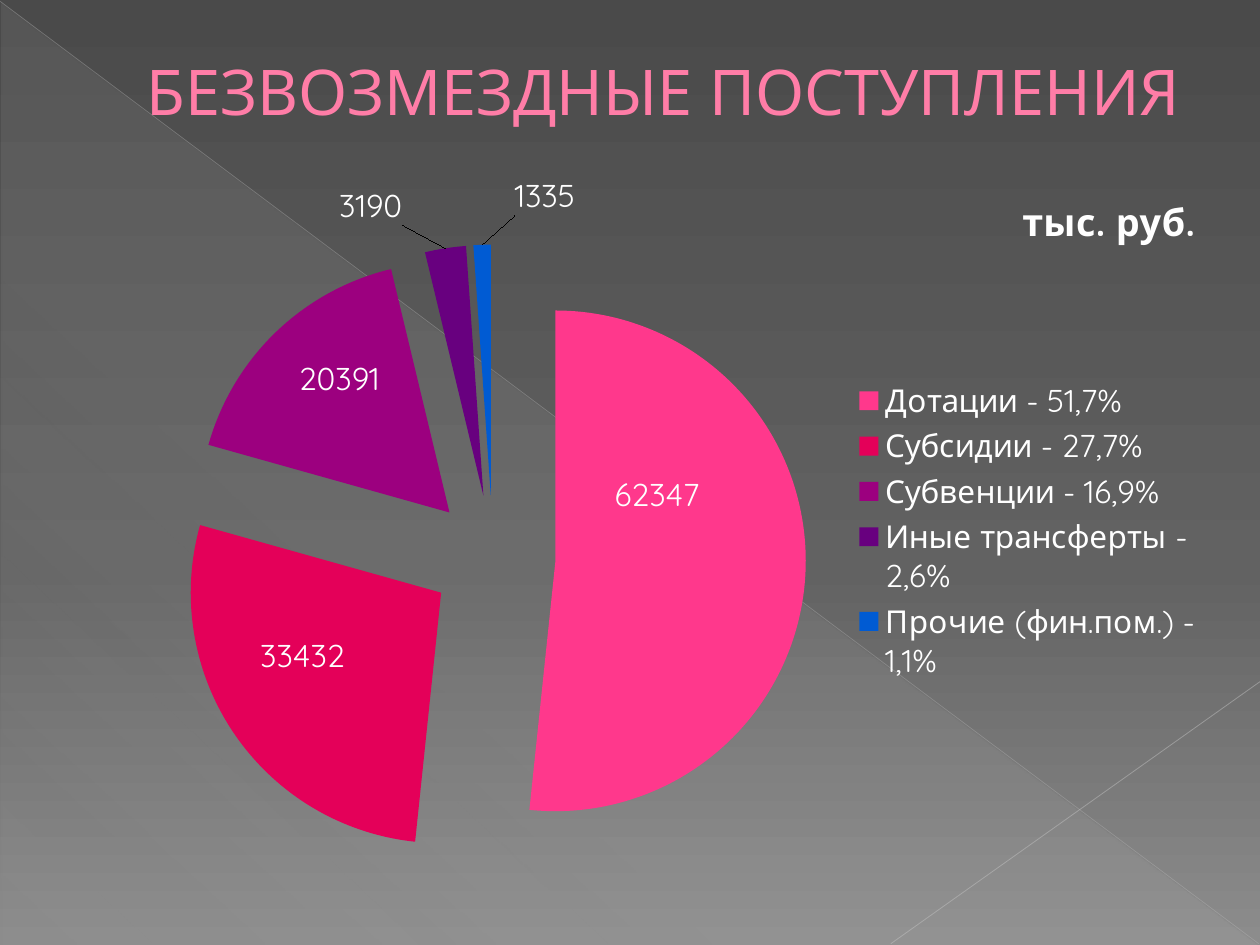
from dataclasses import dataclass

from lxml.etree import SubElement
from pptx import Presentation
from pptx.chart.data import CategoryChartData
from pptx.dml.color import RGBColor
from pptx.enum.chart import XL_CHART_TYPE as ChartType
from pptx.enum.chart import XL_LABEL_POSITION as LabelPosition
from pptx.enum.chart import XL_LEGEND_POSITION as LegendPosition
from pptx.enum.shapes import MSO_CONNECTOR as Connector
from pptx.enum.shapes import MSO_SHAPE as Shape
from pptx.enum.text import MSO_ANCHOR as Anchor
from pptx.enum.text import PP_ALIGN as Align
from pptx.oxml import parse_xml
from pptx.oxml.ns import qn
from pptx.util import Inches, Pt


@dataclass(frozen=True)
class Theme:
    font: str = "Quicksand"
    title_color: str = "FF7DA7"
    text_color: str = "FFFFFF"
    leader_color: str = "000000"
    title_size: float = 36
    unit_size: float = 21.6
    chart_size: float = 18
    background: tuple = ((0, "4A4A4A", 100), (60, "626262", 100), (100, "8C8C8C", 100))
    sheen: tuple = ((0, "D2D2D2", 10), (70, "D2D2D2", 8), (100, "D2D2D2", 1))


THEME = Theme()

SLICES = [
    ("Дотации - 51,7%", 62347, "FF388C", (-0.02, -0.1)),
    ("Субсидии - 27,7%", 33432, "E40059", (-0.03, -0.01)),
    ("Субвенции - 16,9%", 20391, "9C007F", (-0.02, -0.06)),
    ("Иные трансферты - 2,6%", 3190, "68007F", (-0.08, -0.23)),
    ("Прочие (фин.пом.) - 1,1%", 1335, "005BD3", (0.05, -0.24)),
]

DIAGONALS = [
    ((0, 0.01), (9.99, 7.49), "BFBFBF", 0.39, 35),
    ((10, 5.41), (7.07, 7.49), "C6C6C6", 0.47, 45),
]


def set_attributes(target, values):
    for name, value in values.items():
        setattr(target, name, value)


def format_font(font, size, color, bold=False):
    set_attributes(font, {"name": THEME.font, "size": Pt(size), "bold": bold})
    font.color.rgb = RGBColor.from_string(color)


def set_gradient(fill, properties, stops, angle):
    fill.gradient()
    gradient = properties.find(qn("a:gradFill"))
    for child in list(gradient):
        gradient.remove(child)
    stop_list = SubElement(gradient, qn("a:gsLst"))
    for position, color, opacity in stops:
        stop = SubElement(stop_list, qn("a:gs"), pos=str(position * 1000))
        rgb = SubElement(stop, qn("a:srgbClr"), val=color)
        SubElement(rgb, qn("a:alpha"), val=str(opacity * 1000))
    SubElement(gradient, qn("a:lin"), ang=str(angle * 60000), scaled="0")


def set_layout(parent, x, y, width=None, height=None, inner=False, edge=True):
    for old in parent.findall(qn("c:layout")):
        parent.remove(old)
    layout = SubElement(parent, qn("c:layout"))
    manual = SubElement(layout, qn("c:manualLayout"))
    if inner:
        SubElement(manual, qn("c:layoutTarget"), val="inner")
    if edge:
        SubElement(manual, qn("c:xMode"), val="edge")
        SubElement(manual, qn("c:yMode"), val="edge")
    for tag, value in (("x", x), ("y", y), ("w", width), ("h", height)):
        if value is not None:
            SubElement(manual, qn(f"c:{tag}"), val=str(value))
    return layout


def add_backdrop(slide):
    fill = slide.background.fill
    fill.solid()
    properties = slide.element.find(".//" + qn("p:bgPr"))
    set_gradient(fill, properties, THEME.background, 90)
    triangle = slide.shapes.add_shape(
        Shape.RIGHT_TRIANGLE, Inches(0.01), Inches(0.02), Inches(9.98), Inches(7.48)
    )
    triangle.shadow.inherit = False
    triangle.line.fill.background()
    set_gradient(triangle.fill, triangle.element.spPr, THEME.sheen, 133)


def add_diagonal(slide, start, end, color, width, opacity):
    points = [Inches(value) for value in (*start, *end)]
    line = slide.shapes.add_connector(Connector.STRAIGHT, *points)
    line.line.width = Pt(width)
    line.line.color.rgb = RGBColor.from_string(color)
    rgb = line.element.spPr.find(".//" + qn("a:srgbClr"))
    SubElement(rgb, qn("a:alpha"), val=str(opacity * 1000))
    SubElement(line.element.spPr, qn("a:effectLst"))


def add_title(slide, text):
    title = slide.shapes.title
    title.element.getparent().append(title.element)
    set_attributes(title, {
        "left": Inches(0.5), "top": Inches(0.29),
        "width": Inches(9), "height": Inches(0.86),
    })
    title.text_frame.text = text
    title.text_frame.vertical_anchor = Anchor.MIDDLE
    paragraph = title.text_frame.paragraphs[0]
    paragraph.alignment = Align.CENTER
    properties = paragraph._p.get_or_add_pPr()
    properties.set("marL", str(Inches(0.53)))
    properties.set("indent", "0")
    format_font(paragraph.runs[0].font, THEME.title_size, THEME.title_color)


def add_pie(slide):
    data = CategoryChartData()
    data.categories = [name for name, *_ in SLICES]
    data.add_series("Series 1", [value for _, value, *_ in SLICES])
    chart = slide.shapes.add_chart(
        ChartType.PIE, Inches(0.35), Inches(1.31), Inches(9.29), Inches(5.75), data
    ).chart
    format_font(chart.font, THEME.chart_size, THEME.text_color)
    plot_area = chart._chartSpace.find(".//" + qn("c:plotArea"))
    plot_area.insert(0, set_layout(plot_area, 0.009, 0.11, 0.749, 0.864, inner=True))
    plot = chart.plots[0]
    plot.vary_by_categories = True
    format_slices(plot)
    return chart


def format_slices(plot):
    series = plot.series[0]
    for index, (_, _, color, _) in enumerate(SLICES):
        fill = series.points[index].format.fill
        fill.solid()
        fill.fore_color.rgb = RGBColor.from_string(color)
    explosion = parse_xml(
        '<c:explosion xmlns:c="http://schemas.openxmlformats.org/drawingml/2006/chart" val="25"/>'
    )
    series._element.find(qn("c:dPt")).addprevious(explosion)
    labels = series.data_labels
    set_attributes(labels, {"show_value": True, "position": LabelPosition.CENTER})
    format_font(labels.font, THEME.chart_size, THEME.text_color)
    for index, (_, _, _, offset) in enumerate(SLICES):
        series.points[index].data_label.position = LabelPosition.CENTER
    group = labels._element
    for label, (_, _, _, offset) in zip(group.findall(qn("c:dLbl")), SLICES):
        layout = set_layout(label, *offset, edge=False)
        label.find(qn("c:idx")).addnext(layout)
        for tag in ("showLegendKey", "showCatName", "showSerName", "showPercent"):
            label.find(qn(f"c:{tag}")).set("val", "0")
        label.find(qn("c:showVal")).set("val", "1")
    for old in group.findall(qn("c:showLeaderLines")):
        group.remove(old)
    SubElement(group, qn("c:showLeaderLines"), val="1")
    leader = SubElement(group, qn("c:leaderLines"))
    line = SubElement(SubElement(leader, qn("c:spPr")), qn("a:ln"))
    SubElement(SubElement(line, qn("a:solidFill")), qn("a:srgbClr"), val=THEME.leader_color)


def add_legend(chart):
    chart.has_legend = True
    legend = chart.legend
    set_attributes(legend, {"position": LegendPosition.RIGHT, "include_in_layout": False})
    format_font(legend.font, THEME.chart_size, THEME.text_color)
    layout = set_layout(legend._element, 0.69, 0.29, 0.3, 0.43)
    legend._element.find(qn("c:legendPos")).addnext(layout)


def add_unit(chart, text):
    chart.has_title = True
    title = chart.chart_title
    title.text_frame.text = text
    run = title.text_frame.paragraphs[0].runs[0]
    format_font(run.font, THEME.unit_size, THEME.text_color, bold=True)
    layout = set_layout(title._element, 0.83, 0.03)
    title._element.find(qn("c:tx")).addnext(layout)
    title.include_in_layout = False


def main():
    presentation = Presentation()
    set_attributes(presentation, {"slide_width": Inches(10), "slide_height": Inches(7.5)})
    slide = presentation.slides.add_slide(presentation.slide_layouts[5])
    add_backdrop(slide)
    for diagonal in DIAGONALS:
        add_diagonal(slide, *diagonal)
    add_title(slide, "БЕЗВОЗМЕЗДНЫЕ ПОСТУПЛЕНИЯ")
    chart = add_pie(slide)
    add_legend(chart)
    add_unit(chart, "тыс. руб.")
    presentation.save("out.pptx")


if __name__ == "__main__":
    main()
